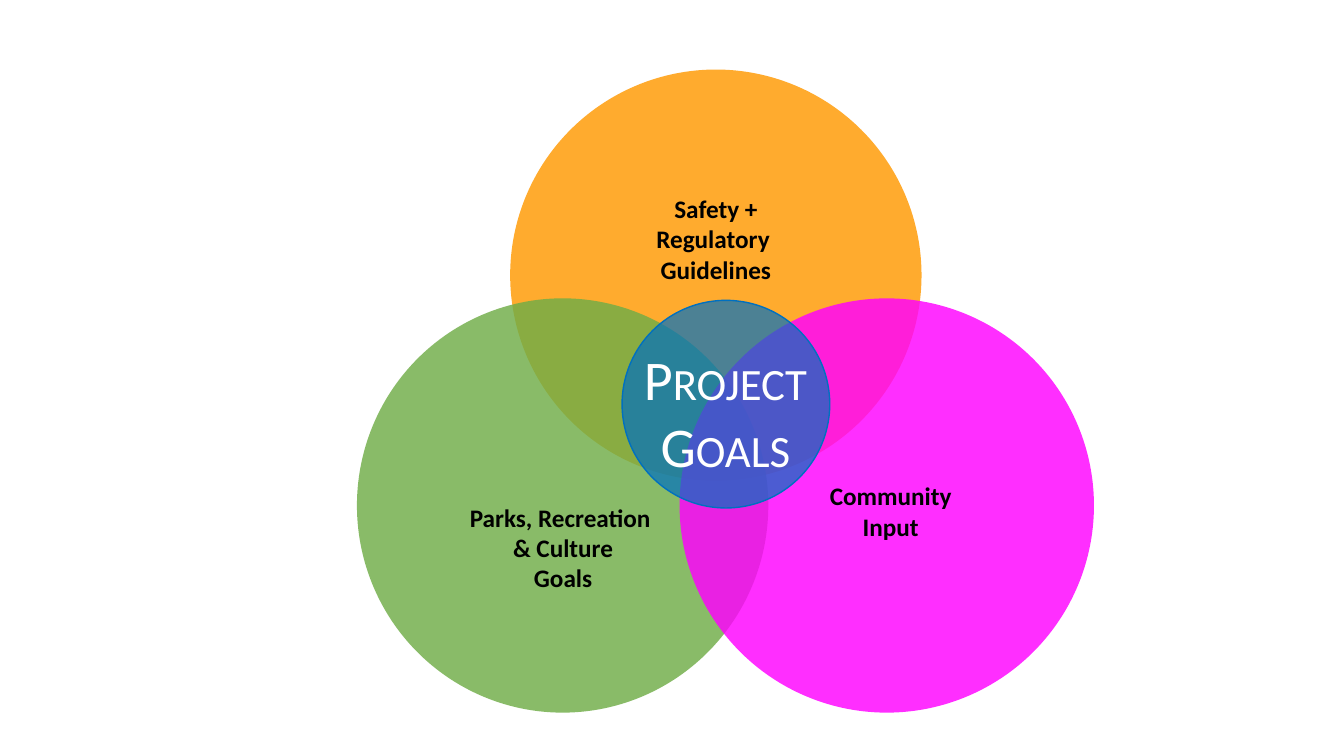
from dataclasses import dataclass

from lxml.etree import SubElement
from pptx import Presentation
from pptx.dml.color import RGBColor
from pptx.enum.shapes import MSO_SHAPE
from pptx.enum.text import MSO_ANCHOR, MSO_AUTO_SIZE, PP_ALIGN
from pptx.oxml.ns import qn
from pptx.util import Inches, Pt

# Content: lines, colour, circle (left, top, width, height), label (left, top, width)
CIRCLES = [
    (["Safety +", "Regulatory ", "Guidelines"], "FF9900", (5.06, 0.69, 4.08, 4.08), (5.74, 1.87, 2.72)),
    (["Parks, Recreation ", "& Culture", "Goals"], "70AD47", (3.54, 2.96, 4.08, 4.11), (4.07, 4.93, 3.03)),
    (["Community", "Input"], "FF00FF", (6.74, 2.96, 4.11, 4.11), (7.32, 4.72, 3.03)),
]
CENTER_TITLE = ["Project", "Goals"]
CENTER_CIRCLE = (6.17, 2.98, 2.06, 2.06)
TITLE_BOX = (4.04, 3.4, 6.31, 1.37)
LABEL_LINE, LABEL_PADDING = 0.3, 0.1


@dataclass(frozen=True)
class Theme:
    font: str = "Calibri"
    label_size: int = 18
    title_size: int = 40
    label_color: str = "000000"
    title_color: str = "FFFFFF"
    center_color: str = "0070C0"
    circle_opacity: int = 82
    center_opacity: int = 70


THEME = Theme()


def write_text(shape, lines, *, size, color, bold=False, small_caps=False, anchor=MSO_ANCHOR.TOP):
    """Fill a shape with centred paragraphs, one for each line."""
    frame = shape.text_frame
    frame.word_wrap = True
    frame.auto_size = MSO_AUTO_SIZE.NONE
    frame.vertical_anchor = anchor
    for index, line in enumerate(lines):
        paragraph = frame.add_paragraph() if index else frame.paragraphs[0]
        paragraph.alignment = PP_ALIGN.CENTER
        run = paragraph.add_run()
        run.text = line
        run.font.name = THEME.font
        run.font.size = Pt(size)
        run.font.bold = bold
        run.font.color.rgb = RGBColor.from_string(color)
        if small_caps:
            run.font._element.set("cap", "small")


def add_circle(slide, box, color, opacity, outlined=False):
    circle = slide.shapes.add_shape(MSO_SHAPE.OVAL, *map(Inches, box))
    circle.shadow.inherit = False
    circle.fill.solid()
    circle.fill.fore_color.rgb = RGBColor.from_string(color)
    fill_color = circle._element.spPr.find(qn("a:solidFill"))[0]
    SubElement(fill_color, qn("a:alpha")).set("val", str(opacity * 1000))
    if outlined:
        circle.line.color.rgb = RGBColor.from_string(color)
        circle.line.width = Pt(1)
    else:
        circle.line.fill.background()


def main():
    presentation = Presentation()
    presentation.slide_width = Inches(13.33)
    presentation.slide_height = Inches(7.5)
    slide = presentation.slides.add_slide(presentation.slide_layouts[5])

    # Overlapping circles with their labels
    for lines, color, circle_box, (left, top, width) in CIRCLES:
        add_circle(slide, circle_box, color, THEME.circle_opacity)
        height = LABEL_LINE * len(lines) + LABEL_PADDING
        label = slide.shapes.add_textbox(*map(Inches, (left, top, width, height)))
        write_text(label, lines, size=THEME.label_size, color=THEME.label_color, bold=True)

    # Central circle, with the slide title brought to the front
    add_circle(slide, CENTER_CIRCLE, THEME.center_color, THEME.center_opacity, outlined=True)
    title = slide.shapes.title
    title.left, title.top, title.width, title.height = map(Inches, TITLE_BOX)
    write_text(title, CENTER_TITLE, size=THEME.title_size, color=THEME.title_color,
               small_caps=True, anchor=MSO_ANCHOR.MIDDLE)
    slide.shapes._spTree.append(title._element)

    presentation.save("out.pptx")


if __name__ == "__main__":
    main()
